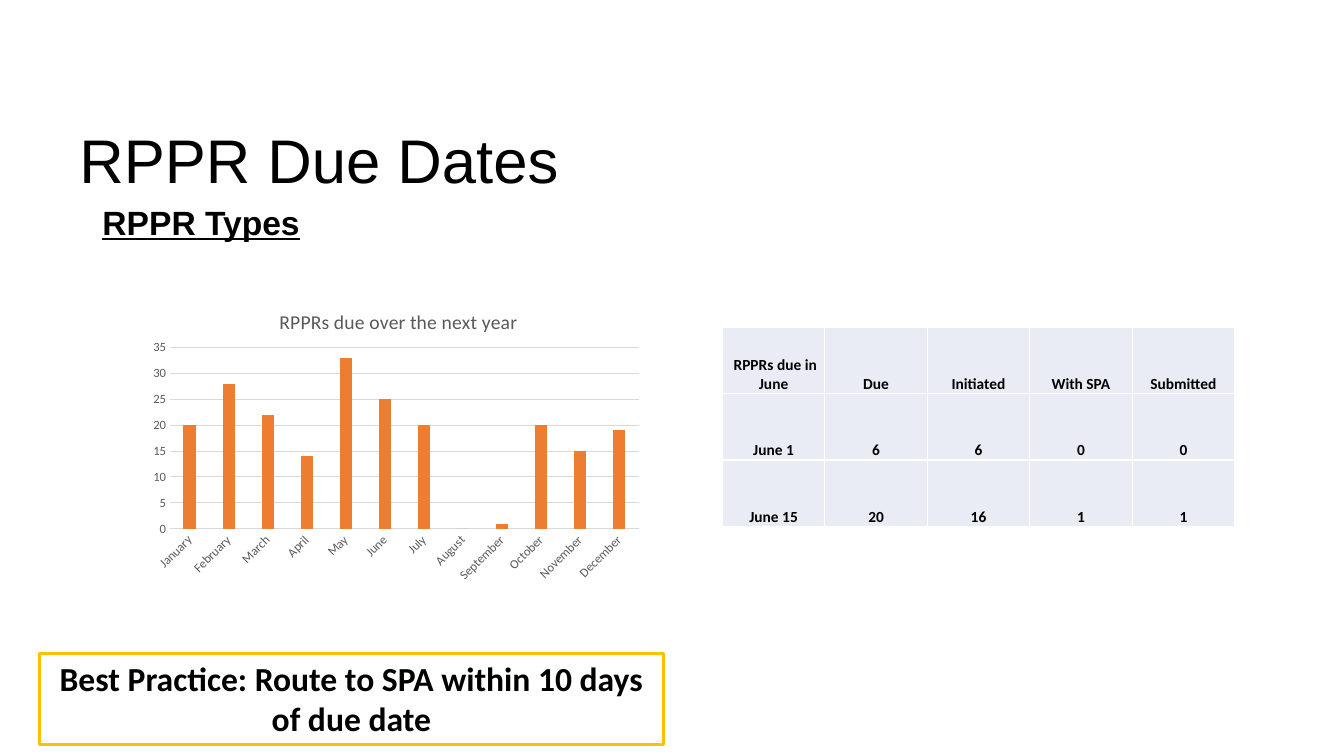
from lxml.etree import SubElement
from pptx import Presentation
from pptx.chart.data import CategoryChartData
from pptx.dml.color import RGBColor
from pptx.enum.chart import XL_CHART_TYPE as ChartType, XL_TICK_MARK as TickMark
from pptx.enum.shapes import MSO_SHAPE as Preset
from pptx.enum.text import MSO_ANCHOR as Anchor, MSO_AUTO_SIZE as AutoSize, PP_ALIGN as Align
from pptx.oxml import parse_xml
from pptx.oxml.ns import nsdecls, qn
from pptx.util import Pt

BLACK = RGBColor(0x00, 0x00, 0x00)
WHITE = RGBColor(0xFF, 0xFF, 0xFF)
GOLD = RGBColor(0xFF, 0xC0, 0x00)
ORANGE = RGBColor(0xED, 0x7D, 0x31)
GREY_TEXT = RGBColor(0x59, 0x59, 0x59)
GREY_LINE = RGBColor(0xD9, 0xD9, 0xD9)
PALE_BLUE = RGBColor(0xE9, 0xEB, 0xF5)

RPPRS_BY_MONTH = {
    "January": 20, "February": 28, "March": 22, "April": 14,
    "May": 33, "June": 25, "July": 20, "August": 0,
    "September": 1, "October": 20, "November": 15, "December": 19,
}
JUNE_STATUS = [
    [" RPPRs due in June", "Due", "Initiated", "With SPA", "Submitted"],
    ["June 1", "6", "6", "0", "0"],
    ["June 15", "20", "16", "1", "1"],
]


def set_all(target, **values):
    for name, value in values.items():
        setattr(target, name, value)


def set_font(font, name, size, color, **values):
    set_all(font, name=name, size=Pt(size), **values)
    font.color.rgb = color


def place(shape, left, top, width, height):
    set_all(shape, left=Pt(left), top=Pt(top), width=Pt(width), height=Pt(height))


def fill_placeholder(holder, text, box, anchor, size, **font_values):
    place(holder, *box)
    frame = holder.text_frame
    set_all(frame, text=text, word_wrap=True, auto_size=AutoSize.NONE,
            vertical_anchor=anchor)
    paragraph = frame.paragraphs[0]
    properties = paragraph._p.get_or_add_pPr()
    properties.set("marL", "0")
    properties.set("indent", "0")
    SubElement(properties, qn("a:buNone"))
    set_all(paragraph, alignment=Align.LEFT, line_spacing=0.9, space_before=Pt(0))
    set_font(paragraph.font, "Arial", size, BLACK, **font_values)


def add_best_practice(slide, text):
    callout = slide.shapes.add_shape(
        Preset.RECTANGLE, Pt(28), Pt(466.5), Pt(446), Pt(65.5))
    callout.shadow.inherit = False
    callout.fill.background()
    callout.line.color.rgb = GOLD
    callout.line.width = Pt(2.25)
    frame = callout.text_frame
    set_all(frame, text=text, word_wrap=True, vertical_anchor=Anchor.TOP,
            auto_size=AutoSize.SHAPE_TO_FIT_TEXT)
    paragraph = frame.paragraphs[0]
    paragraph.alignment = Align.CENTER
    set_font(paragraph.font, "Calibri", 24, BLACK, bold=True)


def manual_layout(**parts):
    """Build a chart layout whose parts are fractions of the chart's size."""
    tags = "".join(f'<c:{tag} val="{value}"/>' for tag, value in parts.items())
    return parse_xml(f'<c:layout {nsdecls("c")}><c:manualLayout>{tags}'
                     '</c:manualLayout></c:layout>')


def replace_layout(parent, layout, before):
    for old in parent.findall(qn("c:layout")):
        parent.remove(old)
    parent.find(qn(before)).addprevious(layout)


def style_axis(axis):
    set_all(axis, major_tick_mark=TickMark.NONE, minor_tick_mark=TickMark.NONE)
    set_font(axis.tick_labels.font, "Calibri", 9, GREY_TEXT)


def style_line(line):
    line.color.rgb = GREY_LINE
    line.width = Pt(0.75)


def add_due_chart(slide):
    data = CategoryChartData()
    data.categories = list(RPPRS_BY_MONTH)
    data.add_series("Series 1", list(RPPRS_BY_MONTH.values()))
    chart = slide.shapes.add_chart(
        ChartType.COLUMN_CLUSTERED, Pt(103.5), Pt(205), Pt(360), Pt(216), data).chart
    chart.has_legend = False
    set_font(chart.font, "Calibri", 10, BLACK)

    title = chart.chart_title
    title.text_frame.text = "RPPRs due over the next year"
    set_font(title.text_frame.paragraphs[0].runs[0].font, "Calibri", 14, GREY_TEXT, bold=False)
    replace_layout(title._element, manual_layout(
        xMode="edge", yMode="edge", x=0.26, y=0.06), "c:overlay")

    plot = chart.plots[0]
    set_all(plot, gap_width=219, overlap=-27, vary_by_categories=False)
    fill = plot.series[0].format.fill
    fill.solid()
    fill.fore_color.rgb = ORANGE
    replace_layout(plot._element.getparent(), manual_layout(
        layoutTarget="inner", xMode="edge", yMode="edge",
        x=0.05, y=0.2, w=0.93, h=0.6), "c:barChart")

    months, counts = chart.category_axis, chart.value_axis
    for axis in (months, counts):
        style_axis(axis)
    style_line(months.format.line)
    months._element.find(qn("c:txPr")).find(qn("a:bodyPr")).set("rot", "-2700000")
    set_all(counts, minimum_scale=0, maximum_scale=35, major_unit=5)
    counts.format.line.fill.background()
    style_line(counts.major_gridlines.format.line)


def border_cell(cell):
    properties = cell._tc.get_or_add_tcPr()
    for index, side in enumerate(("lnL", "lnR", "lnT", "lnB")):
        properties.insert(index, parse_xml(
            f'<a:{side} {nsdecls("a")} w="{Pt(1)}"><a:solidFill>'
            f'<a:srgbClr val="{WHITE}"/></a:solidFill></a:{side}>'))


def style_cell(cell, text):
    set_all(cell, text=text, vertical_anchor=Anchor.BOTTOM, margin_left=Pt(0.7),
            margin_right=Pt(0.7), margin_top=Pt(0.7), margin_bottom=0)
    cell.fill.solid()
    cell.fill.fore_color.rgb = PALE_BLUE
    border_cell(cell)
    paragraph = cell.text_frame.paragraphs[0]
    paragraph.alignment = Align.CENTER
    set_font(paragraph.font, "Calibri", 11, BLACK, bold=True)


def add_status_table(slide):
    rows, columns = len(JUNE_STATUS), len(JUNE_STATUS[0])
    table = slide.shapes.add_table(
        rows, columns, Pt(516), Pt(234), Pt(366), Pt(142)).table
    for row, texts in enumerate(JUNE_STATUS):
        for column, text in enumerate(texts):
            style_cell(table.cell(row, column), text)


def main():
    deck = Presentation()
    set_all(deck, slide_width=Pt(960), slide_height=Pt(540))
    slide = deck.slides.add_slide(deck.slide_layouts[1])
    title, body = slide.placeholders
    fill_placeholder(title, "RPPR Due Dates", (49.5, 52.5, 828, 91.5), Anchor.BOTTOM, 44)
    fill_placeholder(body, "RPPR Types", (66, 144, 408, 343), Anchor.TOP, 24,
                     bold=True, underline=True)
    add_best_practice(slide, "Best Practice: Route to SPA within 10 days of due date")
    add_due_chart(slide)
    add_status_table(slide)
    deck.save("out.pptx")


if __name__ == "__main__":
    main()
